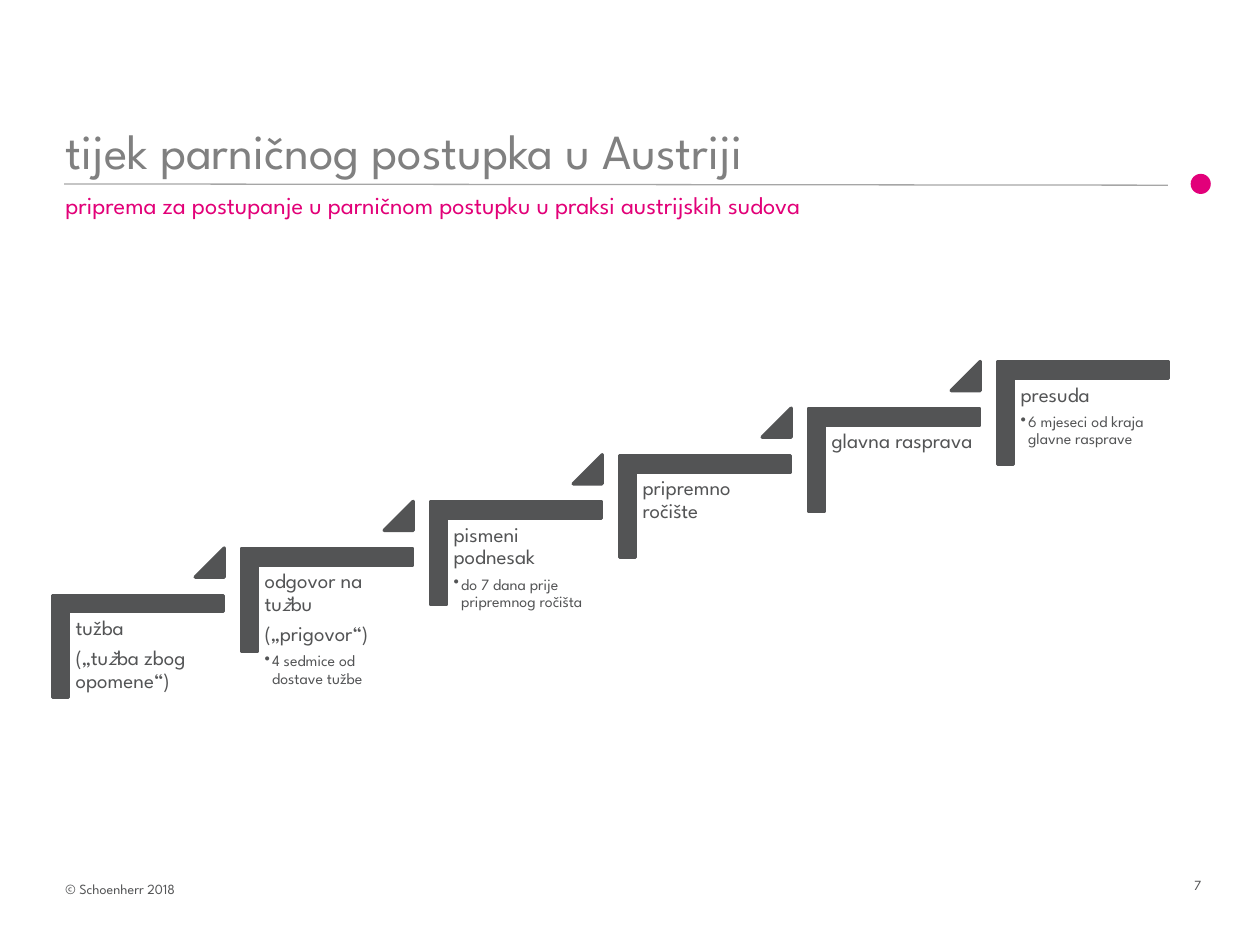
from lxml.etree import SubElement
from pptx import Presentation
from pptx.dml.color import RGBColor
from pptx.enum.shapes import MSO_CONNECTOR, MSO_SHAPE
from pptx.enum.text import MSO_ANCHOR, MSO_AUTO_SIZE, PP_ALIGN
from pptx.oxml.ns import qn
from pptx.util import Inches, Pt

FONT = "League Spartan"
DARK = RGBColor(0x53, 0x54, 0x55)
GREY = RGBColor(0x80, 0x80, 0x80)
RULE = RGBColor(0xA6, 0xA6, 0xA6)
PINK = RGBColor(0xE2, 0x00, 0x7A)
SUBTITLE_PINK = RGBColor(0xE2, 0x00, 0x78)

TITLE = "tijek parničnog postupka u Austriji"
SUBTITLE = "priprema za postupanje u parničnom postupku u praksi austrijskih sudova"
COPYRIGHT = "© Schoenherr 2018"
PAGE = "7"

# Each step: heading paragraphs (runs alternate upright, italic), then bullet
STEPS = [
    ([["tužba"], ["(„tu", "ž", "ba zbog opomene“)"]], None),
    ([["odgovor na tu", "ž", "bu"], ["(„prigovor“)"]], "4 sedmice od dostave tužbe"),
    ([["pismeni podnesak"]], "do 7 dana prije pripremnog ročišta"),
    ([["pripremno ročište"]], None),
    ([["glavna rasprava"]], None),
    ([["presuda"]], "6 mjeseci od kraja glavne rasprave"),
]
STEP_X, STEP_Y = 1.5, -0.37


def box(x, y, w, h):
    return [Inches(v) for v in (x, y, w, h)]


def style(font, size, color, italic=False):
    font.name = FONT
    font.size = Pt(size)
    font.color.rgb = color
    font.italic = italic


def add_text(slide, area, text="", size=12, color=DARK):
    tf = slide.shapes.add_textbox(*box(*area)).text_frame
    tf.word_wrap = True
    if text:
        tf.text = text
        style(tf.paragraphs[0].runs[0].font, size, color)
    return tf


def add_solid(slide, kind, area, color, line=None):
    sp = slide.shapes.add_shape(kind, *box(*area))
    sp.shadow.inherit = False
    sp.fill.solid()
    sp.fill.fore_color.rgb = color
    if line:
        sp.line.color.rgb = color
        sp.line.width = Pt(line)
    else:
        sp.line.fill.background()
    return sp


def add_bullet(p):
    pPr = p._p.get_or_add_pPr()
    pPr.set("marL", str(Inches(0.06)))
    pPr.set("indent", str(Inches(-0.06)))
    SubElement(pPr, qn("a:buChar")).set("char", "•")


def add_step(slide, index, headings, bullet):
    x, y = 0.55 + index * STEP_X, 4.85 + index * STEP_Y
    corner = add_solid(slide, MSO_SHAPE.CORNER, (x + 0.14, y - 0.4, 0.81, 1.36), DARK, 2)
    corner.rotation = 90
    corner.adjustments[0] = corner.adjustments[1] = 0.16

    tf = add_text(slide, (x, y, 1.22, 1.07))
    tf.margin_left = tf.margin_right = tf.margin_top = tf.margin_bottom = Inches(0.05)
    paragraphs = [(runs, 12, 4.2) for runs in headings]
    if bullet:
        paragraphs.append(([bullet], 9, 1.35))
    for n, (runs, size, after) in enumerate(paragraphs):
        p = tf.add_paragraph() if n else tf.paragraphs[0]
        p.line_spacing = 0.9
        p.space_after = Pt(after)
        if n == len(headings):
            add_bullet(p)
        for k, text in enumerate(runs):
            r = p.add_run()
            r.text = text
            style(r.font, size, DARK, italic=k % 2 == 1)

    if index < len(STEPS) - 1:
        arrow = add_solid(slide, MSO_SHAPE.ISOSCELES_TRIANGLE,
                          (x + 1, y - 0.5, 0.23, 0.23), DARK, 2)
        arrow.adjustments[0] = 1


prs = Presentation()
prs.slide_width, prs.slide_height = Inches(10), Inches(7.5)
slide = prs.slides.add_slide(prs.slide_layouts[5])

title = slide.shapes.title
title.left, title.top, title.width, title.height = box(0.42, 0.92, 8.86, 0.55)
tf = title.text_frame
tf.text = TITLE
tf.auto_size = MSO_AUTO_SIZE.NONE
tf.vertical_anchor = MSO_ANCHOR.BOTTOM
tf.paragraphs[0].alignment = PP_ALIGN.LEFT
style(tf.paragraphs[0].runs[0].font, 28, GREY)

rule = slide.shapes.add_connector(MSO_CONNECTOR.STRAIGHT, *box(0.51, 1.46, 9.27, 1.47))
rule.line.color.rgb = RULE
rule.line.width = Pt(0.75)
SubElement(rule._element.spPr, qn("a:effectLst"))
add_solid(slide, MSO_SHAPE.OVAL, (9.45, 1.38, 0.16, 0.16), PINK)

add_text(slide, (0.42, 1.46, 8.11, 0.47), SUBTITLE, 14, SUBTITLE_PINK)
add_text(slide, (0.42, 6.94, 2.2, 0.24), COPYRIGHT, 8)
add_text(slide, (9.38, 6.91, 0.47, 0.24), PAGE, 8)

for i, (headings, bullet) in enumerate(STEPS):
    add_step(slide, i, headings, bullet)

prs.save("out.pptx")
